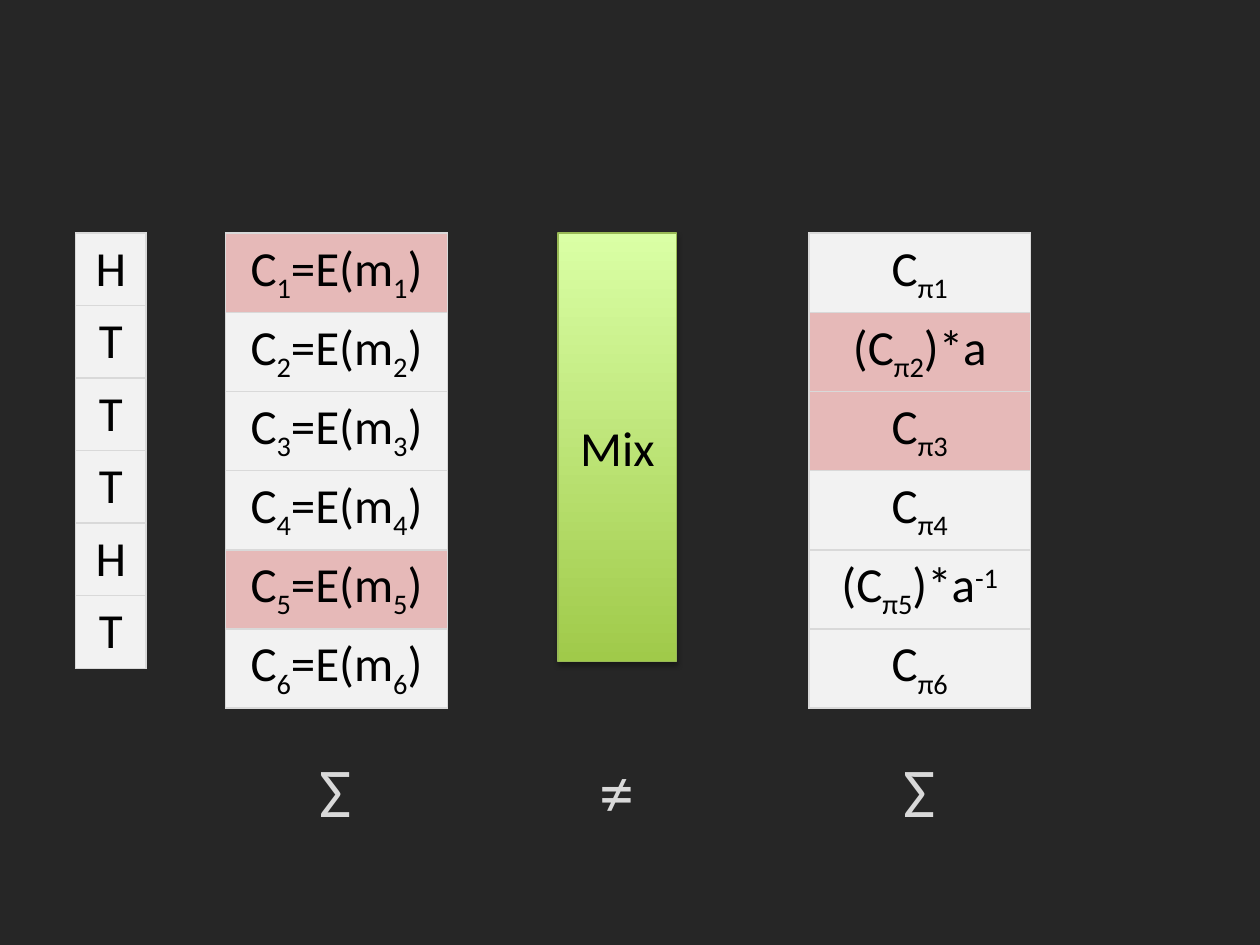
from lxml import etree
from pptx import Presentation
from pptx.dml.color import RGBColor
from pptx.enum.shapes import MSO_SHAPE
from pptx.enum.text import MSO_ANCHOR, MSO_AUTO_SIZE, PP_ALIGN
from pptx.oxml import parse_xml
from pptx.oxml.ns import qn
from pptx.util import Inches, Pt

RECTANGLE = MSO_SHAPE.RECTANGLE
MIDDLE = MSO_ANCHOR.MIDDLE
FIT_SHAPE = MSO_AUTO_SIZE.SHAPE_TO_FIT_TEXT
CENTER = PP_ALIGN.CENTER
DRAWING_NS = "http://schemas.openxmlformats.org/drawingml/2006/main"

FONT = "Calibri"
BACKGROUND, INK, PALE = "262626", "000000", "D9D9D9"
PLAIN, MARKED = "F2F2F2", "E6B9B8"
SUB, SUP = -25, 30

COLUMN_TOP, COLUMN_HEIGHT = 1.85, 3.4
SYMBOL_TOP, SYMBOL_HEIGHT = 5.88, 0.77

COINS = [[(side, 0)] for side in "HTTTHT"]
CIPHERTEXTS = [
    [("C", 0), (str(i), SUB), ("=E(m", 0), (str(i), SUB), (")", 0)]
    for i in range(1, 7)
]
MIXED = [[("C", 0), (f"π{i}", SUB)] for i in range(1, 7)]
MIXED[1] = [("(C", 0), ("π2", SUB), (")*a", 0)]
MIXED[4] = [("(C", 0), ("π5", SUB), (")*a", 0), ("-1", SUP)]


def rgb(value):
    return RGBColor.from_string(value)


def add_run(paragraph, text, size, color, baseline=0):
    run = paragraph.add_run()
    run.text = text
    run.font.name = FONT
    run.font.size = Pt(size)
    run.font.color.rgb = rgb(color)
    if baseline:
        run.font._element.set("baseline", str(baseline * 1000))


def set_borders(cell, color, width):
    properties = cell._tc.get_or_add_tcPr()
    for position, side in enumerate(("lnL", "lnR", "lnT", "lnB")):
        border = etree.Element(qn(f"a:{side}"), w=str(Pt(width)))
        fill = etree.SubElement(border, qn("a:solidFill"))
        etree.SubElement(fill, qn("a:srgbClr"), val=color)
        properties.insert(position, border)


def add_column(slide, left, width, entries, marked=()):
    """Add a one-column table; marked holds the highlighted row indexes."""
    table = slide.shapes.add_table(
        len(entries), 1, Inches(left), Inches(COLUMN_TOP),
        Inches(width), Inches(COLUMN_HEIGHT),
    ).table
    table.first_row = False
    table.horz_banding = False
    for row, entry in enumerate(entries):
        cell = table.cell(row, 0)
        cell.fill.solid()
        cell.fill.fore_color.rgb = rgb(MARKED if row in marked else PLAIN)
        set_borders(cell, PALE, 1)
        paragraph = cell.text_frame.paragraphs[0]
        paragraph.alignment = CENTER
        for text, baseline in entry:
            add_run(paragraph, text, 28, INK, baseline)


def add_mix(slide, left, width):
    mix = slide.shapes.add_shape(
        RECTANGLE, Inches(left), Inches(COLUMN_TOP),
        Inches(width), Inches(COLUMN_HEIGHT),
    )
    mix.fill.gradient()
    mix.fill.gradient_angle = 90
    for stop, position, color in zip(
        mix.fill.gradient_stops, (0, 1), ("A0CA4A", "DAFFA5")
    ):
        stop.position = position
        stop.color.rgb = rgb(color)
    mix.line.color.rgb = rgb("98B955")
    mix.line.width = Pt(0.75)
    mix._element.spPr.append(parse_xml(
        f'<a:effectLst xmlns:a="{DRAWING_NS}">'
        f'<a:outerShdw blurRad="{Pt(3.1)}" dist="{Pt(1.8)}" dir="5400000" '
        'rotWithShape="0"><a:srgbClr val="000000"><a:alpha val="35000"/>'
        '</a:srgbClr></a:outerShdw></a:effectLst>'
    ))
    mix.text_frame.vertical_anchor = MIDDLE
    label = mix.text_frame.paragraphs[0]
    label.alignment = CENTER
    add_run(label, "Mix", 28, INK)


def add_symbol(slide, left, width, symbol):
    box = slide.shapes.add_textbox(
        Inches(left), Inches(SYMBOL_TOP), Inches(width), Inches(SYMBOL_HEIGHT)
    )
    box.text_frame.word_wrap = False
    box.text_frame.auto_size = FIT_SHAPE
    add_run(box.text_frame.paragraphs[0], symbol, 40, PALE)


def main():
    presentation = Presentation()
    presentation.slide_width = Inches(10)
    presentation.slide_height = Inches(7.5)
    slide = presentation.slides.add_slide(presentation.slide_layouts[6])
    slide.background.fill.solid()
    slide.background.fill.fore_color.rgb = rgb(BACKGROUND)

    add_column(slide, 0.6, 0.56, COINS)
    add_column(slide, 1.79, 1.76, CIPHERTEXTS, marked=(0, 4))
    add_mix(slide, 4.43, 0.94)
    add_column(slide, 6.42, 1.76, MIXED, marked=(1, 2))

    add_symbol(slide, 2.44, 0.46, "Σ")
    add_symbol(slide, 4.66, 0.48, "≠")
    add_symbol(slide, 7.07, 0.46, "Σ")
    presentation.save("out.pptx")


if __name__ == "__main__":
    main()
